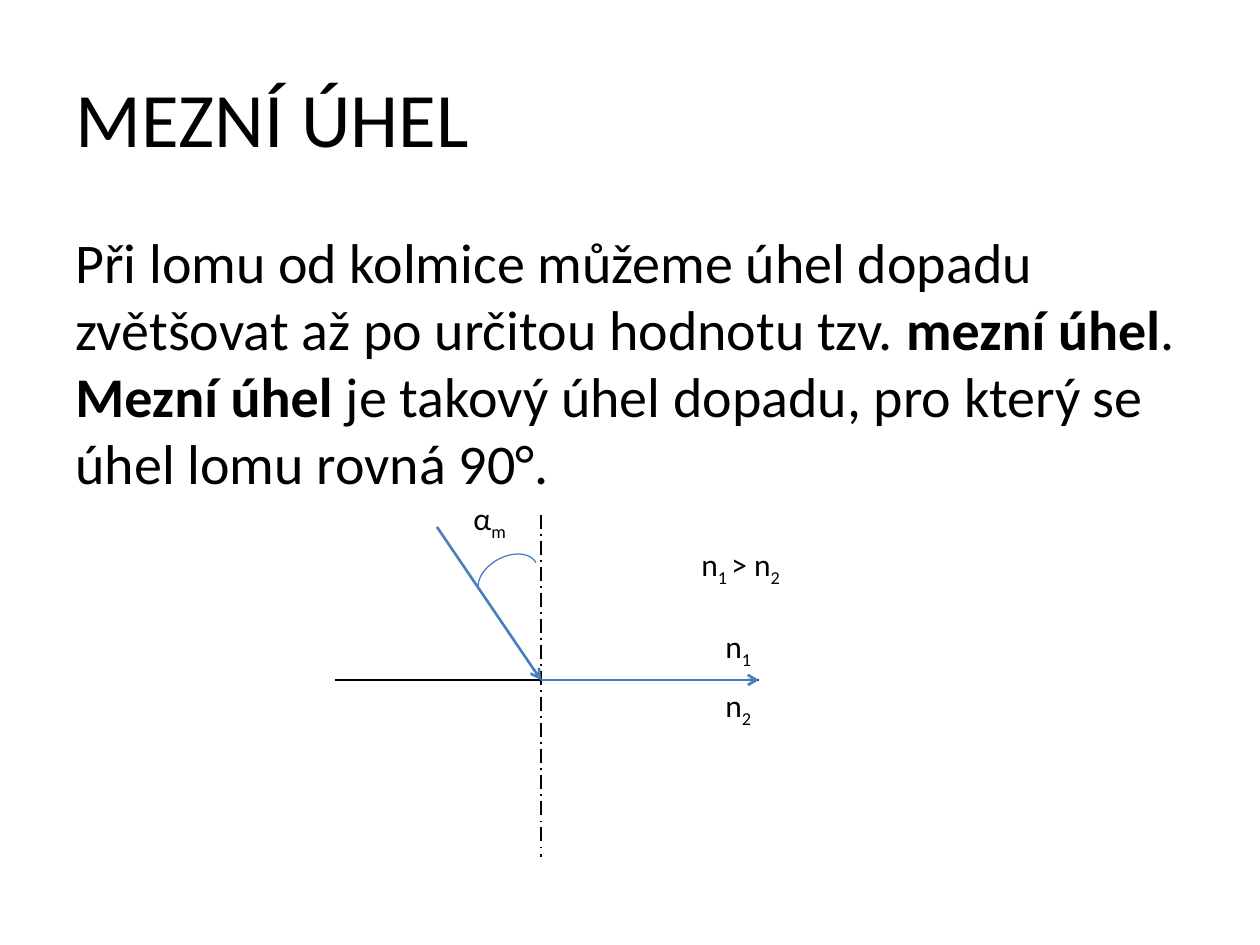
from pptx import Presentation
from pptx.dml.color import RGBColor
from pptx.enum.dml import MSO_LINE as Dash
from pptx.enum.shapes import MSO_CONNECTOR as Conn, MSO_SHAPE as Shape
from pptx.enum.text import MSO_ANCHOR as Anchor, PP_ALIGN as Align
from pptx.oxml.ns import qn
from pptx.util import Emu, Pt
from lxml import etree

SCALE = 914400 / 126
BLACK, BLUE = "000000", "4B7EBC"


def px(n):
    return Emu(round(n * SCALE))


def color(code):
    return RGBColor.from_string(code)


class Sheet:
    font = "Calibri"

    def __init__(self, deck):
        self.slide = deck.slides.add_slide(deck.slide_layouts[5])
        self.shapes = self.slide.shapes

    def fill(self, box, runs, size, anchor=Anchor.TOP):
        """Write runs of (text, style); style is "", "bold" or "sub"."""
        frame = box.text_frame
        frame.word_wrap = True
        frame.vertical_anchor = anchor
        para = frame.paragraphs[0]
        para.alignment = Align.LEFT
        for text, style in runs:
            run = para.add_run()
            run.text = text
            form = {"name": self.font, "size": Pt(size), "bold": style == "bold"}
            for key, val in form.items():
                setattr(run.font, key, val)
            run.font.color.rgb = color(BLACK)
            if style == "sub":
                run.font._element.set("baseline", "-25000")

    def title(self, text, x, y, w, h):
        box = self.shapes.title
        place = {"left": x, "top": y, "width": w, "height": h}
        for key, val in place.items():
            setattr(box, key, px(val))
        self.fill(box, [(text, "")], 44, Anchor.MIDDLE)

    def text(self, runs, x, y, w, h, size=18):
        box = self.shapes.add_textbox(px(x), px(y), px(w), px(h))
        self.fill(box, runs, size)

    def line(self, x1, y1, x2, y2, code=BLACK, width=1, dash=None, arrow=False):
        link = self.shapes.add_connector(
            Conn.STRAIGHT, px(x1), px(y1), px(x2), px(y2))
        link.line.color.rgb = color(code)
        link.line.width = Pt(width)
        if dash:
            link.line.dash_style = dash
        props = link._element.spPr
        if arrow:
            etree.SubElement(props.find(qn("a:ln")), qn("a:tailEnd"), type="arrow")
        etree.SubElement(props, qn("a:effectLst"))

    def arc(self, x, y, w, h, turn, start, end):
        arc = self.shapes.add_shape(Shape.ARC, px(x), px(y), px(w), px(h))
        arc.shadow.inherit = False
        arc.fill.background()
        arc.line.color.rgb = color(BLUE)
        arc.line.width = Pt(0.75)
        arc.rotation = turn
        # Angles are held in 60000ths of a degree, scaled by 100000
        for i, angle in enumerate((start, end)):
            arc.adjustments[i] = angle * 0.6


def main():
    deck = Presentation()
    deck.slide_width, deck.slide_height = px(1260), px(945)
    sheet = Sheet(deck)

    # Title and definition
    sheet.title("MEZNÍ ÚHEL", 63, 38, 1134, 158)
    sheet.text([
        ("Při lomu od kolmice můžeme úhel dopadu zvětšovat až po určitou "
         "hodnotu tzv. ", ""),
        ("mezní úhel", "bold"),
        (". ", ""),
        ("Mezní úhel ", "bold"),
        ("je takový úhel dopadu, pro který se úhel lomu rovná 90°.", ""),
    ], 63, 221, 1134, 624, 32)

    # Boundary and its normal, crossing at the point of incidence
    x, y, end = 541, 680, 759
    sheet.line(335, y, end, y)
    sheet.line(x, 515, x, 857, dash=Dash.LONG_DASH_DOT)

    # Incident and refracted rays, angle of incidence
    for x1, y1, x2, y2 in ((437, 527, x, y), (x, y, end, y)):
        sheet.line(x1, y1, x2, y2, BLUE, 1.5, arrow=True)
    sheet.arc(476, 557, 64, 42, 331.2, 187.26, 0)

    # Labels
    sheet.text([("α", ""), ("m", "sub")], 461, 493, 81, 60)
    for num, top in (("1", 621), ("2", y)):
        sheet.text([("n", ""), (num, "sub")], 713, top, 69, 60)
    sheet.text([("n", ""), ("1 ", "sub"), ("> n", ""), ("2", "sub")],
               689, 539, 207, 60)

    deck.save("out.pptx")


if __name__ == "__main__":
    main()
